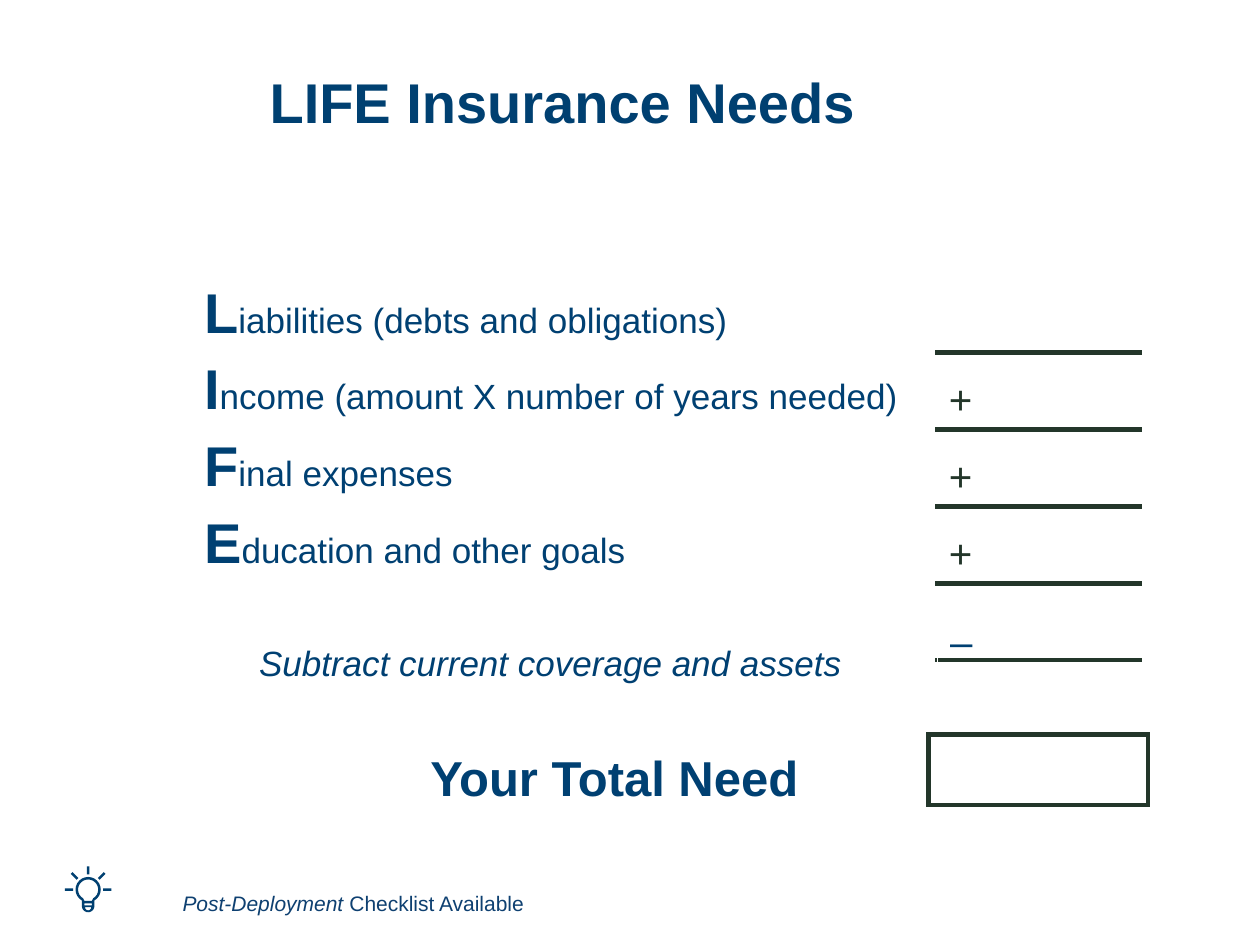
import math
import pptx
import pptx.dml.color
import pptx.enum.text
import pptx.oxml
import pptx.oxml.ns
import pptx.util

NAVY, BLUE, INDIGO, GREEN = "004071", "004072", "0E4071", "23362A"
ALIGN = pptx.enum.text.PP_ALIGN
ANCHOR = pptx.enum.text.MSO_ANCHOR


def color(value):
    return pptx.dml.color.RGBColor.from_string(value)


def arc(center, radius, start, end, step=15):
    angles = [math.radians(angle) for angle in range(start, end + 1, step)]
    return [(center[0] + radius * math.cos(angle), center[1] + radius * math.sin(angle))
            for angle in angles]


def ray(center, inner, outer, angle, half_width):
    along = math.cos(math.radians(angle)), math.sin(math.radians(angle))
    return [(center[0] + along[0] * radius - along[1] * side,
             center[1] + along[1] * radius + along[0] * side)
            for radius, side in ((inner, -half_width), (outer, -half_width),
                                 (outer, half_width), (inner, half_width))]


class Worksheet:
    """Style and current slide on a grid of 100 columns by 75 rows."""

    font = "Arial"

    def __init__(self, presentation):
        presentation.slide_width = pptx.util.Inches(10)
        presentation.slide_height = pptx.util.Inches(7.5)
        self.unit = presentation.slide_width // 100
        self.slide = presentation.slides.add_slide(presentation.slide_layouts[5])

    def grid(self, *values):
        return [round(value * self.unit) for value in values]

    def add_runs(self, paragraph, runs):
        for text, size, hex_color, formats in runs:
            run = paragraph.add_run()
            run.text = text
            values = {"name": self.font, "size": pptx.util.Pt(size), "bold": False, "italic": False}
            for name, value in {**values, **formats}.items():
                setattr(run.font, name, value)
            run.font.color.rgb = color(hex_color)

    def title(self, at, runs):
        shape = self.slide.shapes.title
        for name, value in zip(("left", "top", "width", "height"), self.grid(*at)):
            setattr(shape, name, value)
        shape.text_frame.vertical_anchor = ANCHOR.MIDDLE
        paragraph = shape.text_frame.paragraphs[0]
        paragraph.alignment = ALIGN.LEFT
        paragraph.line_spacing = 0.9
        self.add_runs(paragraph, runs)

    def text(self, at, runs, alignment=ALIGN.LEFT):
        frame = self.slide.shapes.add_textbox(*self.grid(*at)).text_frame
        frame.word_wrap = True
        frame.paragraphs[0].alignment = alignment
        self.add_runs(frame.paragraphs[0], runs)

    def table(self, at, columns, rows):
        shape = self.slide.shapes.add_table(len(rows), len(columns), *self.grid(*at))
        table = shape.table
        table.first_row = table.horz_banding = False
        for column, width in zip(table.columns, self.grid(*columns)):
            column.width = width
        for row, height in zip(table.rows, self.grid(*rows)):
            row.height = height
            for cell in row.cells:
                cell.fill.background()
        return table

    def cell(self, cell, runs=(), anchor=ANCHOR.TOP, borders=""):
        cell.vertical_anchor = anchor
        self.add_runs(cell.text_frame.paragraphs[0], runs)
        properties = cell._tc.get_or_add_tcPr()
        for index, side in enumerate(borders):
            line = pptx.oxml.parse_xml(
                f'<a:ln{side} {pptx.oxml.ns.nsdecls("a")} w="{pptx.util.Pt(3)}">'
                f'<a:solidFill><a:srgbClr val="{GREEN}"/></a:solidFill></a:ln{side}>')
            properties.insert(index, line)

    def outline(self, contours, hex_color):
        contours = [[tuple(self.grid(*point)) for point in contour] for contour in contours]
        builder = self.slide.shapes.build_freeform(*contours[0][0], scale=1.0)
        for index, contour in enumerate(contours):
            if index:
                builder.move_to(*contour[0])
            builder.add_line_segments(contour[1:], close=True)
        shape = builder.convert_to_shape()
        shape.shadow.inherit = False
        shape.fill.solid()
        shape.fill.fore_color.rgb = color(hex_color)
        shape.line.fill.background()

    def bulb(self, center, hex_color):
        x, y = center
        base = x, y + 1.3
        glass = arc(center, 1, 120, 420) + arc(base, 0.5, 0, 180)
        inside = arc(center, 0.8, 120, 420) + [(x + 0.3, y + 0.9), (x - 0.3, y + 0.9)]
        slit = [(x + side, y + drop) for side, drop in
                ((-0.3, 1.1), (0.3, 1.1), (0.3, 1.25), (-0.3, 1.25))]
        tip = arc((x, y + 1.4), 0.25, 0, 180)
        rays = [ray(center, 1.2, 1.85, angle, 0.1) for angle in range(180, 361, 45)]
        self.outline([glass, inside, slit, tip, *rays], hex_color)


def main():
    presentation = pptx.Presentation()
    sheet = Worksheet(presentation)
    bold, italic = {"bold": True}, {"italic": True}
    sheet.title((20.4, 1.1, 72.6, 14.5), [("LIFE Insurance Needs", 32, NAVY, bold)])

    needs = ["Liabilities (debts and obligations)", "Income (amount X number of years needed)",
             "Final expenses", "Education and other goals"]
    table = sheet.table((15.2, 21.9, 75.4, 44.4), (59.1, 16.3), [6.1] * 5 + [6.4] * 2)
    for row, need in enumerate(needs):
        sheet.cell(table.cell(row, 0), [(need[0], 32, BLUE, bold), (need[1:], 20, BLUE, {})])
        plus = [("+", 23, GREEN, {})] if row else []
        sheet.cell(table.cell(row, 1), plus, ANCHOR.BOTTOM, "TB" if row else "B")
    sheet.cell(table.cell(4, 1), borders="TB")
    for row in (5, 6):
        table.cell(row, 0).merge(table.cell(row, 1))

    sheet.text((7.7, 50.4, 60.1, 4.4),
               [("Subtract current coverage and assets", 20, BLUE, italic)], ALIGN.RIGHT)
    minus = sheet.table((74.4, 48.7, 20.1, 4.8), [20.1], [4.3])
    sheet.cell(minus.cell(0, 0), [("–", 23, BLUE, {})])

    sheet.text((29.8, 58.8, 37.9, 5.7), [("Your Total Need", 28, BLUE, bold)], ALIGN.CENTER)
    total = sheet.table((73.7, 58.3, 17.4, 5.6), [17.4], [5.6])
    sheet.cell(total.cell(0, 0), borders="LRTB")

    sheet.bulb((7, 70.6), NAVY)
    sheet.text((13.5, 70.2, 67.8, 3),
               [("Post-Deployment ", 12, INDIGO, italic), ("Checklist Available", 12, INDIGO, {})])
    presentation.save("out.pptx")


if __name__ == "__main__":
    main()
